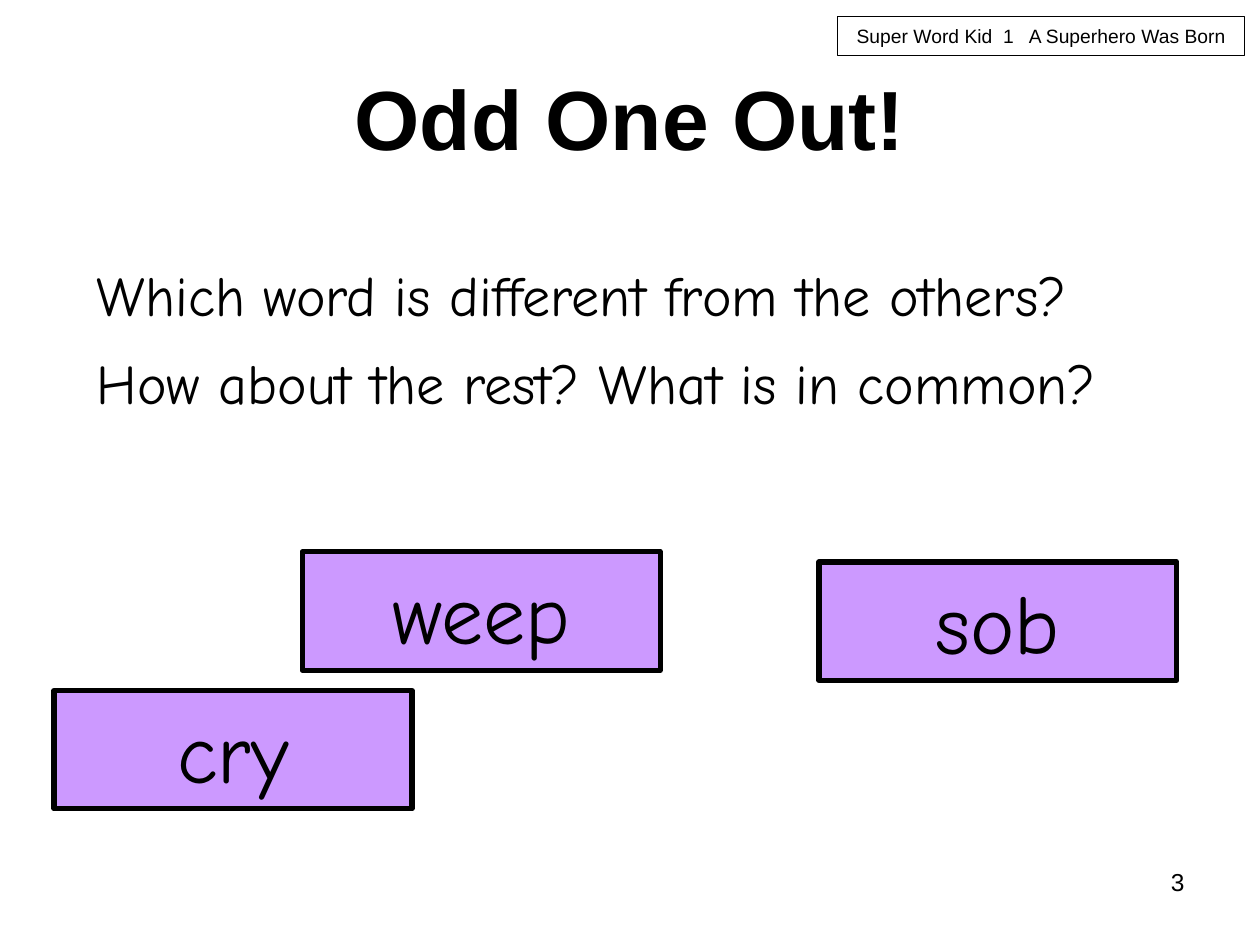
from pptx import Presentation
from pptx import util as u
from pptx.dml.color import RGBColor
from pptx.enum import shapes, text

COLORS = {"ink": "000000", "card": "CC99FF"}
ALIGN = text.PP_ALIGN
ANCHOR = text.MSO_ANCHOR


def write(shape, words, anchor=ANCHOR.TOP, align=ALIGN.LEFT, **font_format):
    frame = shape.text_frame
    frame.word_wrap = True
    frame.vertical_anchor = anchor
    paragraph = frame.paragraphs[0]
    paragraph.alignment = align
    run = paragraph.add_run()
    run.text = words
    for name, value in {"name": "Arial", "bold": False, **font_format}.items():
        setattr(run.font, name, value)
    run.font.color.rgb = RGBColor.from_string(COLORS["ink"])


def inches(box):
    return [u.Inches(length) for length in box]


def add_label(slide, box, words, **font_format):
    shape = slide.shapes.add_textbox(*inches(box))
    write(shape, words, **font_format)


def add_box(slide, box, words, line_width, fill=None, **font_format):
    shape = slide.shapes.add_shape(shapes.MSO_SHAPE.RECTANGLE, *inches(box))
    shape.shadow.inherit = False
    if fill:
        shape.fill.solid()
        shape.fill.fore_color.rgb = RGBColor.from_string(COLORS[fill])
    else:
        shape.fill.background()
    shape.line.color.rgb = RGBColor.from_string(COLORS["ink"])
    shape.line.width = u.Pt(line_width)
    write(shape, words, ANCHOR.MIDDLE, ALIGN.CENTER, **font_format)


def place_title(slide, box, words):
    title = slide.shapes.title
    title.left, title.top, title.width, title.height = inches(box)
    write(title, words, ANCHOR.MIDDLE, ALIGN.CENTER, size=u.Pt(48), bold=True)


def add_questions(slide, box, questions):
    left, top, width, height = box
    pitch = height / len(questions)
    for index, question in enumerate(questions):
        add_label(slide, (left, top + index * pitch, width, 0.63), question,
                  name="Comic Neue", size=u.Pt(32))


def add_cards(slide, positions, width, height):
    for word, (left, top) in positions.items():
        add_box(slide, (left, top, width, height), word, 3, "card",
                name="Comic Neue", size=u.Pt(48))


def main():
    presentation = Presentation()
    presentation.slide_width = u.Inches(10)
    presentation.slide_height = u.Inches(7.5)
    slide = presentation.slides.add_slide(presentation.slide_layouts[5])

    add_box(slide, (6.65, 0.13, 3.23, 0.31),
            "Super Word Kid  1   A Superhero Was Born", 0.75, size=u.Pt(11))
    add_label(slide, (7.17, 6.83, 2.33, 0.52), "3",
              align=ALIGN.RIGHT, size=u.Pt(14))
    place_title(slide, (0.5, 0.3, 9, 1.25), "Odd One Out!")
    add_questions(slide, (0.67, 2.02, 8.9, 1.4), [
        "Which word is different from the others?",
        "How about the rest? What is in common?",
    ])
    add_cards(slide, {"weep": (2.4, 4.38), "sob": (6.5, 4.46),
                      "cry": (0.43, 5.48)}, 2.84, 0.94)
    presentation.save("out.pptx")


if __name__ == "__main__":
    main()
